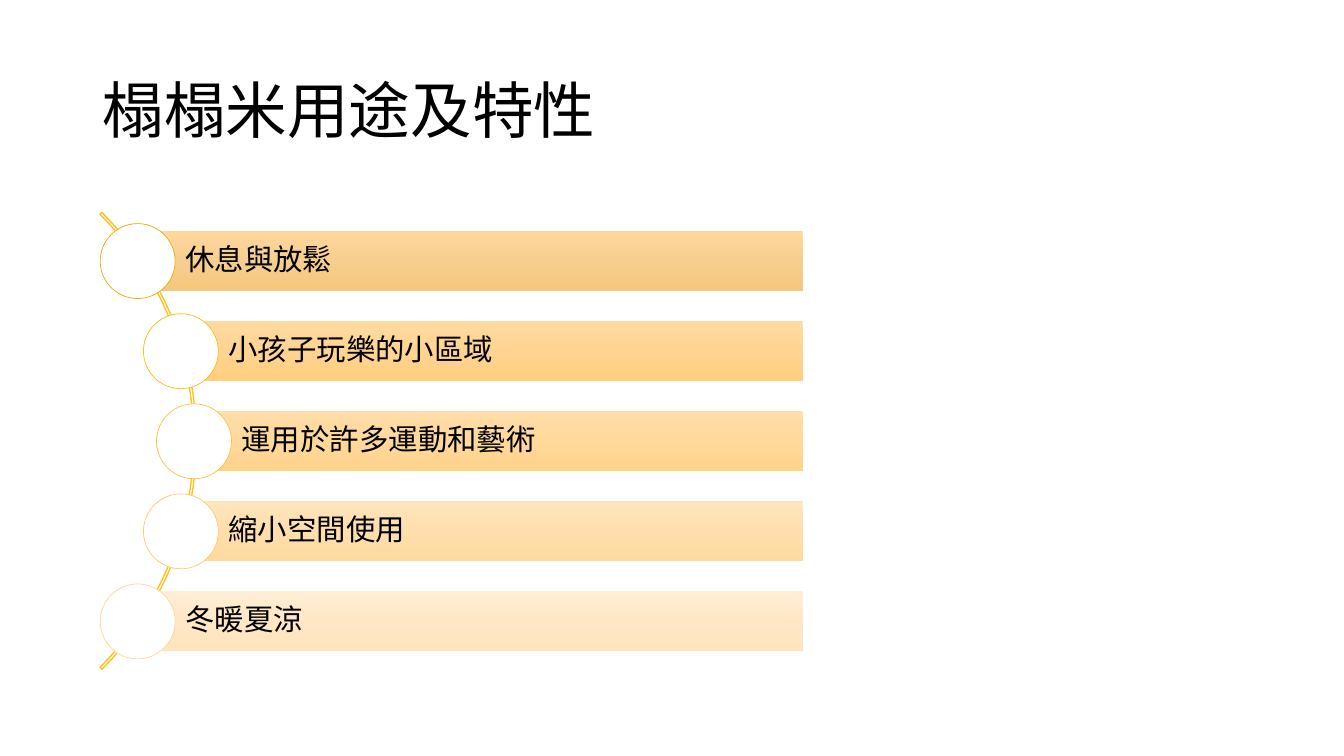
from copy import deepcopy

from lxml.etree import SubElement
from pptx import Presentation
from pptx.dml.color import RGBColor
from pptx.enum.shapes import MSO_SHAPE as Shape
from pptx.enum.text import MSO_ANCHOR as Anchor, MSO_AUTO_SIZE as AutoSize, PP_ALIGN as Align
from pptx.oxml.ns import qn
from pptx.util import Cm, Pt

FONT = "Noto Sans CJK SC"
BLACK = RGBColor(0x00, 0x00, 0x00)
WHITE = RGBColor(0xFF, 0xFF, 0xFF)
ARC_GOLD = RGBColor(0xFF, 0xC1, 0x22)

# Row colours: gradient top, middle, bottom, then the dot outline
ROW_1 = [RGBColor(0xFF, 0xD7, 0x9D), RGBColor(0xF6, 0xCE, 0x90),
         RGBColor(0xF5, 0xC7, 0x7C), RGBColor(0xE7, 0xAE, 0x00)]
ROW_2 = [RGBColor(0xFF, 0xDA, 0xA0), RGBColor(0xFF, 0xD4, 0x92),
         RGBColor(0xFF, 0xCE, 0x7E), RGBColor(0xFF, 0xBC, 0x14)]
ROW_3 = [RGBColor(0xFF, 0xDE, 0xAB), RGBColor(0xFF, 0xD8, 0x9B),
         RGBColor(0xFF, 0xD3, 0x8A), RGBColor(0xFF, 0xC2, 0x3F)]
ROW_4 = [RGBColor(0xFF, 0xE5, 0xBD), RGBColor(0xFF, 0xDE, 0xAD),
         RGBColor(0xFF, 0xDA, 0xA0), RGBColor(0xFF, 0xCA, 0x6A)]
ROW_5 = [RGBColor(0xFF, 0xEE, 0xD6), RGBColor(0xFF, 0xE7, 0xC5),
         RGBColor(0xFF, 0xE4, 0xBE), RGBColor(0xFF, 0xD6, 0x95)]

# Text, left edge of the bar (cm), colours
ROWS = [
    ("休息與放鬆", 3.47, ROW_1),
    ("小孩子玩樂的小區域", 4.56, ROW_2),
    ("運用於許多運動和藝術", 4.89, ROW_3),
    ("縮小空間使用", 4.56, ROW_4),
    ("冬暖夏涼", 3.47, ROW_5),
]
FIRST_CENTRE, PITCH = 6.58, 2.27
BAR_RIGHT, BAR_HEIGHT, DOT_SIZE = 20.23, 1.51, 1.89


class Deck:
    def __init__(self, prs, layout):
        self.s = prs.slides.add_slide(layout)

    def set_text(self, shape, text, size):
        tf = shape.text_frame
        tf.word_wrap = True
        tf.auto_size = AutoSize.NONE
        tf.vertical_anchor = Anchor.MIDDLE
        p = tf.paragraphs[0]
        p.text = text
        p.alignment = Align.LEFT
        p.line_spacing = 0.9
        p.font.size = Pt(size)
        p.font.color.rgb = BLACK
        p.font.name = FONT
        # East Asian typeface
        SubElement(p._p.pPr.find(qn("a:defRPr")), qn("a:ea")).set("typeface", FONT)
        return tf

    def title(self, text, left, top, width, height):
        sp = self.s.shapes.title
        sp.left, sp.top, sp.width, sp.height = Cm(left), Cm(top), Cm(width), Cm(height)
        self.set_text(sp, text, 44)

    def shape(self, kind, left, top, width, height):
        sp = self.s.shapes.add_shape(kind, Cm(left), Cm(top), Cm(width), Cm(height))
        sp.shadow.inherit = False
        return sp

    def arc(self, left, top, size):
        sp = self.shape(Shape.BLOCK_ARC, left, top, size, size)
        for i, value in enumerate((189, 27, 0.004)):
            sp.adjustments[i] = value
        sp.fill.background()
        sp.line.color.rgb = ARC_GOLD
        sp.line.width = Pt(1)

    def bar(self, text, left, centre, colours):
        sp = self.shape(Shape.RECTANGLE, left, centre - BAR_HEIGHT / 2,
                        BAR_RIGHT - left, BAR_HEIGHT)
        sp.line.fill.background()
        sp.fill.gradient()
        sp.fill.gradient_angle = 270
        # Third gradient stop
        stops = sp._element.spPr.find(".//" + qn("a:gsLst"))
        stops.insert(1, deepcopy(stops[0]))
        for stop, position, colour in zip(sp.fill.gradient_stops, (0, 0.5, 1), colours):
            stop.position = position
            stop.color.rgb = colour
        tf = self.set_text(sp, text, 21)
        tf.margin_left = Cm(1.2)
        tf.margin_right = tf.margin_top = tf.margin_bottom = Cm(0.15)
        tf.paragraphs[0].space_after = Pt(7.35)

    def dot(self, x, y, colour):
        sp = self.shape(Shape.OVAL, x - DOT_SIZE / 2, y - DOT_SIZE / 2, DOT_SIZE, DOT_SIZE)
        sp.fill.solid()
        sp.fill.fore_color.rgb = WHITE
        sp.line.color.rgb = colour
        sp.line.width = Pt(0.5)


def main():
    prs = Presentation()
    prs.slide_width, prs.slide_height = Cm(33.87), Cm(19.05)
    deck = Deck(prs, prs.slide_layouts[5])

    # Title
    deck.title("榻榻米用途及特性", 2.33, 1.01, 29.21, 3.68)

    # Curved list
    deck.arc(-11.33, 2.97, 16.28)
    for i, (text, left, (*gradient, outline)) in enumerate(ROWS):
        centre = FIRST_CENTRE + i * PITCH
        deck.bar(text, left, centre, gradient)
        deck.dot(left, centre, outline)

    prs.save("out.pptx")


if __name__ == "__main__":
    main()
